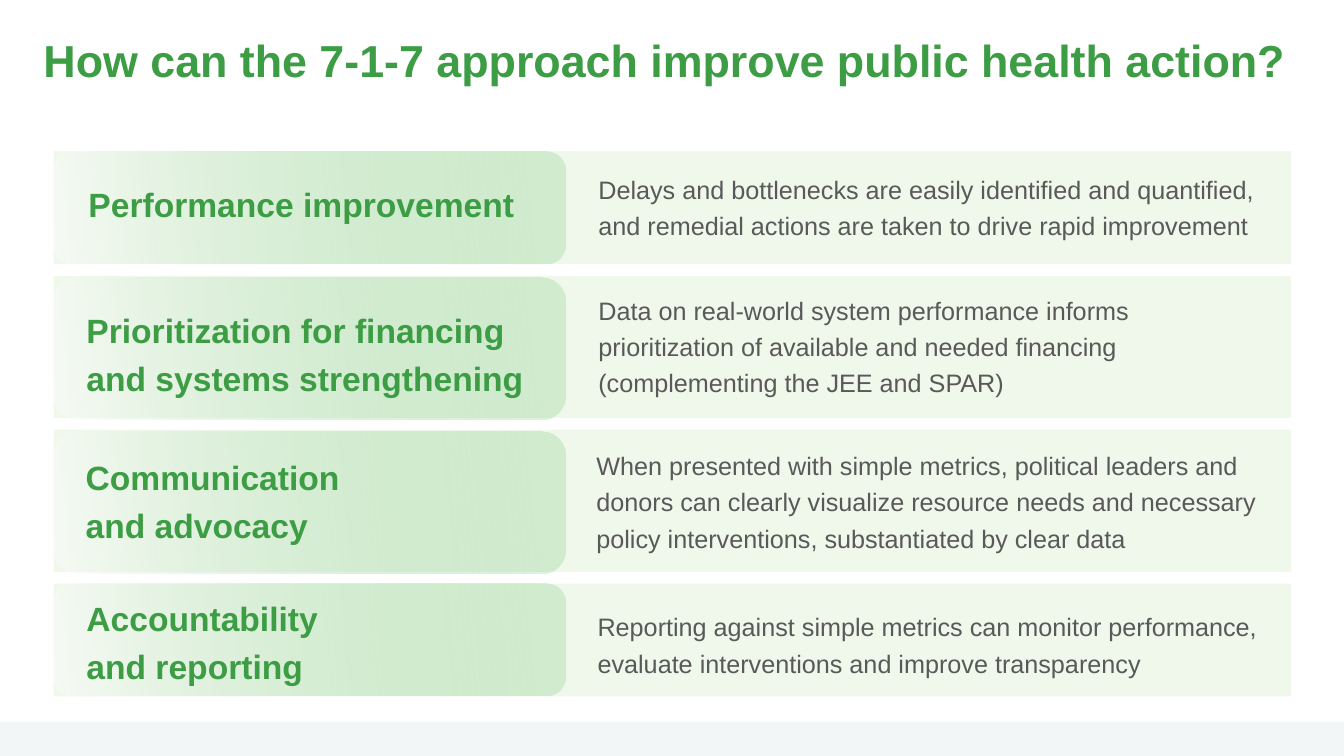
from dataclasses import dataclass

from lxml.etree import SubElement
from pptx import Presentation
from pptx.dml.color import RGBColor
from pptx.enum.shapes import MSO_SHAPE as Shape
from pptx.enum.text import MSO_ANCHOR as Anchor, MSO_AUTO_SIZE as AutoSize, PP_ALIGN as Align
from pptx.oxml.ns import qn
from pptx.util import Cm, Pt


@dataclass(frozen=True)
class Theme:
    font: str = "Arial"
    heading: str = "3D9D45"
    body: str = "595959"
    band: str = "E2F0D9"
    label_start: str = "48B852"
    label_end: str = "FFFFFF"
    footer: str = "F2F6F7"
    title_size: int = 32
    label_size: int = 24
    body_size: int = 18


@dataclass(frozen=True)
class Row:
    height: float
    label_shift: float
    label: str
    label_at: tuple
    detail: str
    detail_at: tuple


class SlideBuilder:
    def __init__(self, slide, theme):
        self.slide = slide
        self.theme = theme

    def panel(self, kind, left, top, width, height):
        shape = self.slide.shapes.add_shape(kind, Cm(left), Cm(top), Cm(width), Cm(height))
        shape.shadow.inherit = False
        shape.line.fill.background()
        return shape

    def set_opacity(self, shape, *percentages):
        colors = shape.element.spPr.iter(qn("a:srgbClr"))
        for color, percentage in zip(colors, percentages):
            SubElement(color, qn("a:alpha"), val=str(percentage * 1000))

    def bar(self, left, top, width, height, color, opacity=100):
        shape = self.panel(Shape.RECTANGLE, left, top, width, height)
        shape.fill.solid()
        shape.fill.fore_color.rgb = RGBColor.from_string(color)
        self.set_opacity(shape, opacity)

    def label_panel(self, left, top, width, height):
        shape = self.panel(Shape.ROUNDED_RECTANGLE, left, top, width, height)
        shape.fill.gradient()
        shape.fill.gradient_angle = 186
        colors = (self.theme.label_start, self.theme.label_end)
        for position, (stop, color) in enumerate(zip(shape.fill.gradient_stops, colors)):
            stop.position = position
            stop.color.rgb = RGBColor.from_string(color)
        self.set_opacity(shape, 18, 50)

    def fill_text(self, box, text, size, color, bold=False, spacing=1.2, anchor=Anchor.TOP):
        frame = box.text_frame
        frame.word_wrap = True
        frame.auto_size = AutoSize.NONE
        frame.vertical_anchor = anchor
        para = frame.paragraphs[0]
        para.text = text
        para.alignment = Align.LEFT
        para.line_spacing = spacing
        para.font.name = self.theme.font
        para.font.size = Pt(size)
        para.font.bold = bold
        para.font.color.rgb = RGBColor.from_string(color)

    def title(self, text, left, top, width, height):
        box = self.slide.shapes.title
        box.left, box.top, box.width, box.height = map(Cm, (left, top, width, height))
        self.fill_text(box, text, self.theme.title_size, self.theme.heading, True, 0.9)

    def text(self, text, place, *style, **options):
        box = self.slide.shapes.add_textbox(*map(Cm, place))
        self.fill_text(box, text, *style, **options)


ROWS = [
    Row(2.84, 0, "Performance improvement", (1.98, 3.81, 11.91, 2.46),
        "Delays and bottlenecks are easily identified and quantified, "
        "and remedial actions are taken to drive rapid improvement",
        (14.83, 4.11, 17.22, 2.46)),
    Row(3.58, 0.05, "Prioritization for financing and systems strengthening",
        (1.93, 7.47, 12.27, 2.57),
        "Data on real-world system performance informs prioritization of "
        "available and needed financing (complementing the JEE and SPAR)",
        (14.83, 7.16, 17.22, 2.92)),
    Row(3.58, 0.05, "Communication\vand advocacy", (1.91, 11.18, 11.91, 2.46),
        "When presented with simple metrics, political leaders and donors can clearly "
        "visualize resource needs and necessary policy interventions, "
        "substantiated by clear data",
        (14.78, 11.07, 17.22, 3.35)),
    Row(2.84, 0, "Accountability\vand reporting", (1.93, 14.73, 11.91, 2.46),
        "Reporting against simple metrics can monitor performance, "
        "evaluate interventions and improve transparency",
        (14.81, 15.14, 17.22, 3.23)),
]


def main():
    deck = Presentation()
    deck.slide_width, deck.slide_height = Cm(33.87), Cm(19.05)
    theme = Theme()
    page = SlideBuilder(deck.slides.add_slide(deck.slide_layouts[5]), theme)

    page.bar(0, 18.19, 33.87, 0.86, theme.footer)
    page.title("How can the 7-1-7 approach improve public health action?",
               0.84, 0.84, 32.16, 3.68)

    left, top, gap = 1.35, 3.81, 0.3
    for row in ROWS:
        page.bar(left, top, 31.19, row.height, theme.band, 50)
        page.label_panel(left, top + row.label_shift, 12.9, row.height - 0.02)
        anchor = Anchor.TOP if row.label_shift or "\v" in row.label else Anchor.MIDDLE
        page.text(row.label, row.label_at, theme.label_size, theme.heading, True, anchor=anchor)
        page.text(row.detail, row.detail_at, theme.body_size, theme.body)
        top += row.height + gap

    deck.save("out.pptx")


if __name__ == "__main__":
    main()
